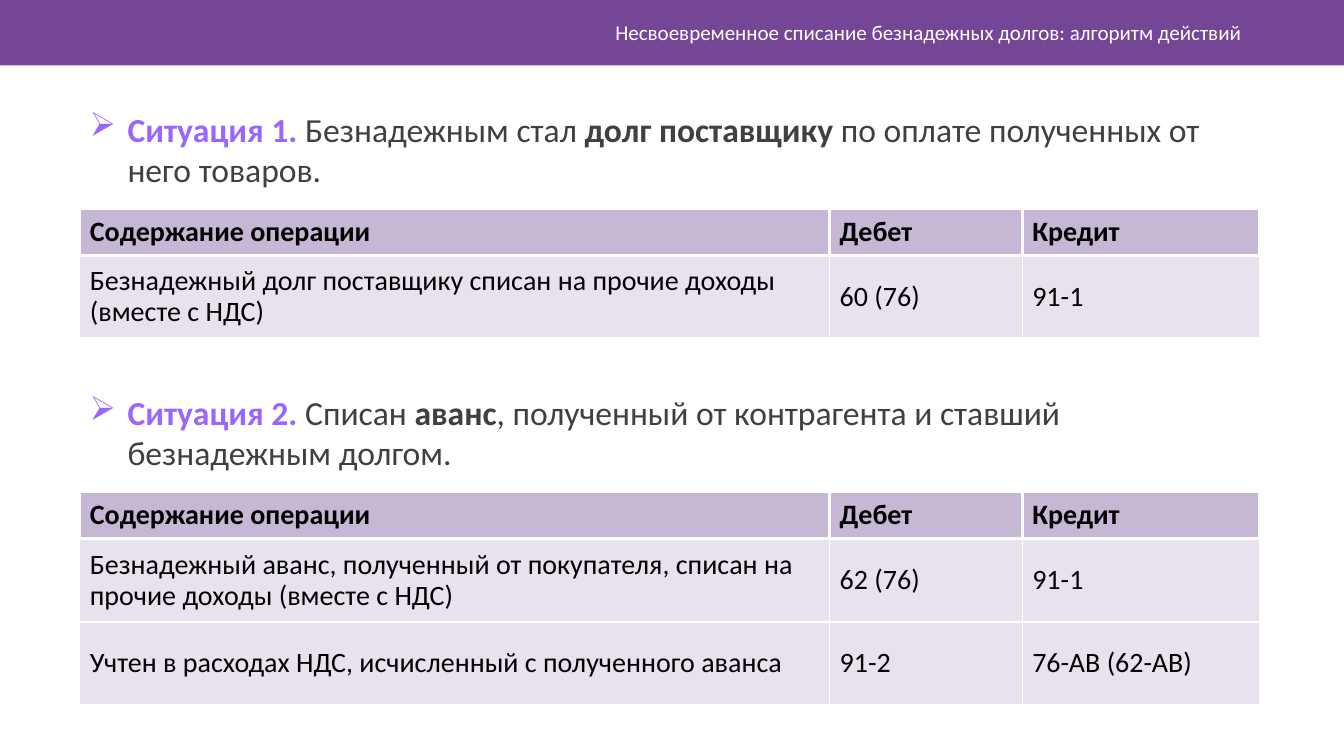
"""Build the slide on writing off bad debts: two situations with posting tables."""
from dataclasses import dataclass

from lxml import etree
from pptx import Presentation
from pptx.dml.color import RGBColor
from pptx.enum.shapes import MSO_SHAPE
from pptx.enum.text import MSO_ANCHOR, PP_ALIGN
from pptx.oxml.ns import qn
from pptx.util import Pt

RECTANGLE = MSO_SHAPE.RECTANGLE
MIDDLE = MSO_ANCHOR.MIDDLE
RIGHT = PP_ALIGN.RIGHT

FONT = "Calibri"
WHITE, BLACK, GREY = "FFFFFF", "000000", "404040"
BAND, ACCENT = "764696", "9966FF"
HEADER_FILL, BODY_FILL = "C6B7D5", "E8E2EE"

LEFT, WIDTH = 57, 843
TEXT_TOP, TABLE_TOP, STEP = 74.2, 149, 202.3
COLUMN_WIDTHS = (535.6, 137.6, 169.4)
HEADER_HEIGHT, BODY_HEIGHT = 33.5, 59.5
INDENT = 27
THICK, THIN = 2.25, 1
HEADINGS = ("Содержание операции", "Дебет", "Кредит")


@dataclass(frozen=True)
class Span:
    text: str
    color: str = GREY
    bold: bool = False


@dataclass(frozen=True)
class Situation:
    spans: tuple[Span, ...]
    postings: tuple[tuple[str, str, str], ...]


SITUATIONS = (
    Situation(
        (
            Span("Ситуация 1. ", ACCENT, True),
            Span("Безнадежным стал "),
            Span("долг поставщику ", bold=True),
            Span("по оплате полученных от него товаров."),
        ),
        (("Безнадежный долг поставщику списан на прочие доходы (вместе с НДС)",
          "60 (76)", "91-1"),),
    ),
    Situation(
        (
            Span("Ситуация 2. ", ACCENT, True),
            Span("Списан "),
            Span("аванс", bold=True),
            Span(", полученный от контрагента и ставший безнадежным долгом."),
        ),
        (
            ("Безнадежный аванс, полученный от покупателя, списан на прочие доходы (вместе с НДС)",
             "62 (76)", "91-1"),
            ("Учтен в расходах НДС, исчисленный с полученного аванса",
             "91-2", "76-АВ (62-АВ)"),
        ),
    ),
)


def rgb(value: str) -> RGBColor:
    """Turn a hex string into a colour."""
    return RGBColor.from_string(value)


def apply(target, values: dict) -> None:
    """Set each named attribute on the target."""
    for name, value in values.items():
        setattr(target, name, value)


def add_span(para, span: Span, size: float) -> None:
    """Append a formatted run to a paragraph."""
    run = para.add_run()
    run.text = span.text
    apply(run.font, {"name": FONT, "size": Pt(size), "bold": span.bold})
    run.font.color.rgb = rgb(span.color)


def add_box(page, left: float, top: float, width: float, height: float):
    """Add a wrapping text box and return its text frame."""
    box = page.shapes.add_textbox(Pt(left), Pt(top), Pt(width), Pt(height))
    box.text_frame.word_wrap = True
    return box.text_frame


def add_header(page) -> None:
    """Draw the top band with the topic of the talk."""
    band = page.shapes.add_shape(RECTANGLE, 0, 0, Pt(960), Pt(46.8))
    band.shadow.inherit = False
    band.fill.solid()
    band.fill.fore_color.rgb = rgb(BAND)
    band.line.fill.background()
    frame = add_box(page, 255, 8.8, 639, 28.8)
    frame.vertical_anchor = MIDDLE
    para = frame.paragraphs[0]
    para.alignment = RIGHT
    topic = "Несвоевременное списание безнадежных долгов: алгоритм действий"
    add_span(para, Span(topic, WHITE), 15)


def add_statement(page, spans: tuple[Span, ...], top: float) -> None:
    """Draw the bulleted description of a situation."""
    para = add_box(page, LEFT, top, WIDTH, 66).paragraphs[0]
    properties = para._p.get_or_add_pPr()
    properties.set("marL", str(Pt(INDENT)))
    properties.set("indent", str(-Pt(INDENT)))
    etree.SubElement(properties, qn("a:buChar")).set("char", "➢")
    for span in spans:
        add_span(para, span, 24)


def add_borders(cell, widths: dict[str, float]) -> None:
    """Give the cell white borders of the given widths."""
    properties = cell._tc.get_or_add_tcPr()
    for side, width in widths.items():
        line = etree.SubElement(properties, qn(f"a:ln{side}"), w=str(Pt(width)))
        fill = etree.SubElement(line, qn("a:solidFill"))
        etree.SubElement(fill, qn("a:srgbClr"), val=WHITE)


def format_cell(cell, text: str, is_header: bool, is_code: bool) -> None:
    """Fill in one table cell."""
    side = THICK if is_header else THIN
    add_borders(cell, {"L": side, "R": side, "T": THICK, "B": THICK})
    cell.fill.solid()
    cell.fill.fore_color.rgb = rgb(HEADER_FILL if is_header else BODY_FILL)
    right = 20 if is_code and not is_header else 7.2
    apply(cell, {"vertical_anchor": MIDDLE, "margin_right": Pt(right)})
    para = cell.text_frame.paragraphs[0]
    para.line_spacing = 0.9
    add_span(para, Span(text, BLACK, is_header), 20)


def add_postings(page, postings: tuple[tuple[str, str, str], ...], top: float) -> None:
    """Draw the table of postings."""
    rows = (HEADINGS, *postings)
    height = HEADER_HEIGHT + BODY_HEIGHT * len(postings)
    table = page.shapes.add_table(
        len(rows), len(HEADINGS), Pt(LEFT), Pt(top), Pt(WIDTH), Pt(height)).table
    table.horz_banding = False
    for column, width in zip(table.columns, COLUMN_WIDTHS):
        column.width = Pt(width)
    for row_index, texts in enumerate(rows):
        is_header = row_index == 0
        table.rows[row_index].height = Pt(HEADER_HEIGHT if is_header else BODY_HEIGHT)
        for column_index, text in enumerate(texts):
            cell = table.cell(row_index, column_index)
            format_cell(cell, text, is_header, column_index > 0)


def main() -> None:
    """Build and save the deck."""
    deck = Presentation()
    apply(deck, {"slide_width": Pt(960), "slide_height": Pt(540)})
    page = deck.slides.add_slide(deck.slide_layouts[6])
    add_header(page)
    for index, situation in enumerate(SITUATIONS):
        add_statement(page, situation.spans, TEXT_TOP + STEP * index)
        add_postings(page, situation.postings, TABLE_TOP + STEP * index)
    deck.save("out.pptx")


if __name__ == "__main__":
    main()
